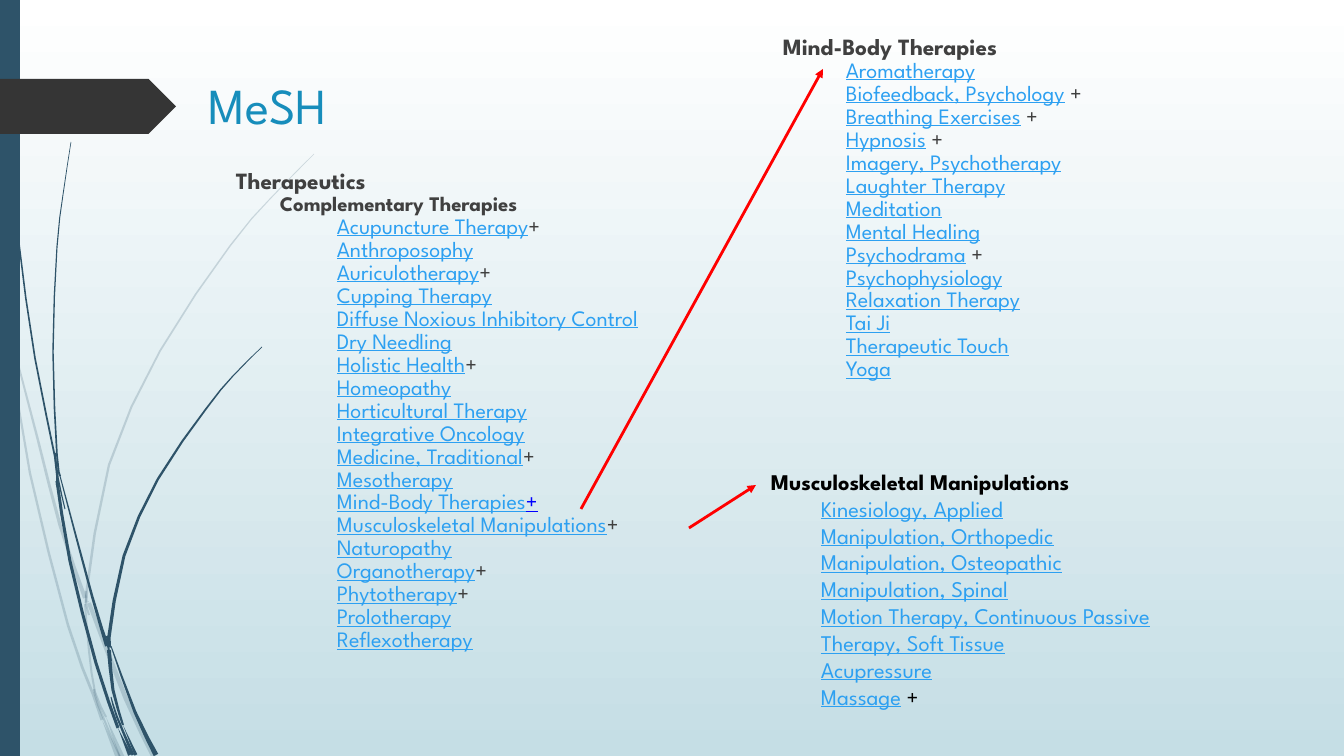
import math
from dataclasses import dataclass

import pptx
import pptx.dml.color
import pptx.enum.shapes
import pptx.enum.text
import pptx.oxml
import pptx.oxml.ns
import pptx.util

PX = 914400 / 100.8  # EMU in one px
SHAPES = pptx.enum.shapes.MSO_SHAPE


@dataclass(frozen=True)
class Theme:
    font: str = "League Spartan"
    sky: str = "FFFFFF"
    mist: str = "C5DEE5"
    navy: str = "2E5369"
    tag: str = "353535"
    title: str = "178DBB"
    text: str = "404040"
    black: str = "000000"
    link: str = "2DA0F1"
    linked_plus: str = "0000FF"
    arrow: str = "FF0000"
    title_size: float = 36
    heading_size: float = 16.6
    subheading_size: float = 14.8
    item_size: float = 15.7
    box_size: float = 16


T = Theme()

THERAPIES = [
    "Acupuncture Therapy+", "Anthroposophy", "Auriculotherapy+", "Cupping Therapy",
    "Diffuse Noxious Inhibitory Control", "Dry Needling", "Holistic Health+",
    "Homeopathy", "Horticultural Therapy", "Integrative Oncology",
    "Medicine, Traditional+", "Mesotherapy", "Mind-Body Therapies+",
    "Musculoskeletal Manipulations+", "Naturopathy", "Organotherapy+",
    "Phytotherapy+", "Prolotherapy", "Reflexotherapy",
]
MIND_BODY = [
    "Aromatherapy", "Biofeedback, Psychology +", "Breathing Exercises +",
    "Hypnosis +", "Imagery, Psychotherapy", "Laughter Therapy", "Meditation",
    "Mental Healing", "Psychodrama +", "Psychophysiology", "Relaxation Therapy",
    "Tai Ji", "Therapeutic Touch", "Yoga",
]
MANIPULATIONS = [
    "Kinesiology, Applied", "Manipulation, Orthopedic", "Manipulation, Osteopathic",
    "Manipulation, Spinal", "Motion Therapy, Continuous Passive",
    "Therapy, Soft Tissue", "Acupressure", "Massage +",
]

# Centre points of each piece of grass, then its half width at both ends
PALE_BLADES = [
    ([(0, 293), (10, 335), (11, 353)], 2, 0.3),
    ([(14, 348), (38, 440), (60, 525), (85, 598)], 0.8, 2),
    ([(89, 603), (126, 699), (154, 757)], 2, 2.5),
    ([(106, 717), (122, 757)], 0, 2.5),
    ([(11, 353), (30, 473), (68, 625), (93, 694), (102, 720)], 1, 1.5),
    ([(85, 604), (89, 651), (95, 692), (106, 717)], 1, 1),
    ([(314, 154), (270, 199), (230, 246), (160, 351), (109, 465), (87, 589),
      (88, 601)], 0.3, 1.5),
    ([(102, 720), (118, 757)], 0, 2.5),
    ([(86, 591), (86, 603), (89, 615)], 1, 1),
    ([(94, 689), (98, 705), (120, 757)], 1, 1),
]
DARK_BLADES = [
    ([(3, 0), (5, 48), (8, 110), (18, 235), (35, 358), (55, 457), (57, 485)], 0.5, 1),
    ([(60, 476), (92, 596), (107, 646)], 0.5, 2),
    ([(111, 646), (135, 712), (156, 755)], 0.5, 2.5),
    ([(57, 481), (70, 561), (96, 663), (118, 728)], 1.5, 1.5),
    ([(71, 142), (63, 195), (57, 247), (53, 352), (57, 455), (60, 476)], 0.3, 1),
    ([(123, 725), (136, 755)], 0, 1.5),
    ([(55, 453), (58, 478), (65, 509)], 1, 0.5),
    ([(262, 347), (233, 376), (206, 409), (158, 479), (124, 556), (109, 637),
      (111, 646)], 0.3, 2),
    ([(118, 728), (130, 755)], 0, 2),
    ([(109, 650), (113, 690), (123, 725)], 2, 1),
    ([(107, 636), (109, 651), (111, 661)], 1, 1),
    ([(111, 697), (117, 717), (133, 755)], 0.5, 1.5),
]


def emu(px):
    return pptx.util.Emu(round(px * PX))


def rgb(color):
    return pptx.dml.color.RGBColor.from_string(color)


def paint(shape, color, alpha=None):
    shape.shadow.inherit = False
    shape.line.fill.background()
    shape.fill.solid()
    shape.fill.fore_color.rgb = rgb(color)
    if alpha is not None:
        clr = shape.fill._xPr.find(".//" + pptx.oxml.ns.qn("a:srgbClr"))
        clr.append(pptx.oxml.parse_xml(
            f'<a:alpha {pptx.oxml.ns.nsdecls("a")} val="{alpha * 1000}"/>'))


def add_block(s, kind, left, top, width, height, color):
    shape = s.shapes.add_shape(kind, emu(left), emu(top), emu(width), emu(height))
    paint(shape, color)
    return shape


def smooth(points):
    """Add the Catmull-Rom midpoint between each pair of points."""
    ext = [points[0], *points, points[-1]]
    curve = [points[0]]
    for a, b, c, d in zip(ext, ext[1:], ext[2:], ext[3:]):
        mid = tuple((9 * (q + r) - p - u) / 16 for p, q, r, u in zip(a, b, c, d))
        curve += [mid, c]
    return curve


def add_blade(s, points, start, end, alpha=None):
    curve = smooth(points)
    last = len(curve) - 1
    left, right = [], []
    for i, (x, y) in enumerate(curve):
        (x0, y0), (x1, y1) = curve[max(i - 1, 0)], curve[min(i + 1, last)]
        half = (start + (end - start) * i / last) / math.hypot(x1 - x0, y1 - y0)
        dx, dy = (y1 - y0) * half, (x0 - x1) * half
        left.append((emu(x + dx), emu(y + dy)))
        right.append((emu(x - dx), emu(y - dy)))
    outline = left + right[::-1]
    builder = s.shapes.build_freeform(*outline[0])
    builder.add_line_segments(outline[1:], close=True)
    paint(builder.convert_to_shape(), T.navy, alpha)


def add_textbox(s, left, top, width, height):
    tf = s.shapes.add_textbox(emu(left), emu(top), emu(width), emu(height)).text_frame
    tf.word_wrap = True
    return tf


def style(r, size, color, bold=False, underline=False):
    r.font.name = T.font
    r.font.size = pptx.util.Pt(size)
    r.font.color.rgb = rgb(color)
    r.font.bold = bold
    r.font.underline = underline


def add_line(tf, text, indent, spacing):
    p = tf.add_paragraph() if tf.text else tf.paragraphs[0]
    p.text = text
    p.line_spacing = spacing
    p._p.get_or_add_pPr().set("marL", str(emu(indent)))
    return p


def add_heading(tf, text, indent, size, color, spacing=1.0):
    style(add_line(tf, text, indent, spacing).runs[0], size, color, bold=True)


def add_links(tf, items, indent, size, color, spacing=1.0):
    for item in items:
        label = item.rstrip(" +")
        p = add_line(tf, label, indent, spacing)
        style(p.runs[0], size, T.link, underline=True)
        if label != item:
            r = p.add_run()
            r.text = item[len(label):]
            linked = label == "Mind-Body Therapies"
            style(r, size, T.linked_plus if linked else color, underline=linked)


def add_arrow(s, x1, y1, x2, y2):
    line = s.shapes.add_connector(pptx.enum.shapes.MSO_CONNECTOR.STRAIGHT,
                                  emu(x1), emu(y1), emu(x2), emu(y2))
    line.line.color.rgb = rgb(T.arrow)
    line.line.width = pptx.util.Pt(2)
    ns = pptx.oxml.ns.nsdecls("a")
    line.line._get_or_add_ln().append(
        pptx.oxml.parse_xml(f'<a:tailEnd {ns} type="triangle"/>'))
    line._element.spPr.append(pptx.oxml.parse_xml(f"<a:effectLst {ns}/>"))


def add_background(s):
    fill = s.background.fill
    fill.gradient()
    fill.gradient_angle = 270
    for stop, color in zip(fill.gradient_stops, (T.sky, T.mist)):
        stop.color.rgb = rgb(color)


def main():
    prs = pptx.Presentation()
    prs.slide_width, prs.slide_height = emu(1344), emu(756)
    s = prs.slides.add_slide(prs.slide_layouts[6])

    # Backdrop: gradient, grass blades, side bar and title tag
    add_background(s)
    for blades, alpha in ((PALE_BLADES, 20), (DARK_BLADES, None)):
        for blade in blades:
            add_blade(s, *blade, alpha)
    add_block(s, SHAPES.RECTANGLE, 0, 0, 20, 756, T.navy)
    add_block(s, SHAPES.PENTAGON, 0, 79, 176, 55, T.tag)

    # Title
    tf = add_textbox(s, 199, 66, 176, 77)
    tf.vertical_anchor = pptx.enum.text.MSO_ANCHOR.MIDDLE
    tf.text = "MeSH"
    style(tf.paragraphs[0].runs[0], T.title_size, T.title)

    # Therapeutics tree
    tf = add_textbox(s, 163, 165, 598, 553)
    add_heading(tf, "Therapeutics", 63, T.heading_size, T.text, 0.87)
    add_heading(tf, "Complementary Therapies", 107, T.subheading_size, T.text, 0.87)
    add_links(tf, THERAPIES, 164, T.item_size, T.text, 0.87)

    # Mind-body branch
    tf = add_textbox(s, 672, 27, 594, 416)
    add_heading(tf, "Mind-Body Therapies", 101, T.heading_size, T.text)
    add_links(tf, MIND_BODY, 164, T.item_size, T.text, 0.87)
    add_arrow(s, 581, 509, 823, 69)

    # Musculoskeletal branch
    tf = add_textbox(s, 761, 463, 476, 254)
    add_heading(tf, "Musculoskeletal Manipulations", 0, T.box_size, T.black)
    add_links(tf, MANIPULATIONS, 50, T.box_size, T.black)
    add_arrow(s, 689, 528, 756, 485)

    prs.save("out.pptx")


if __name__ == "__main__":
    main()
